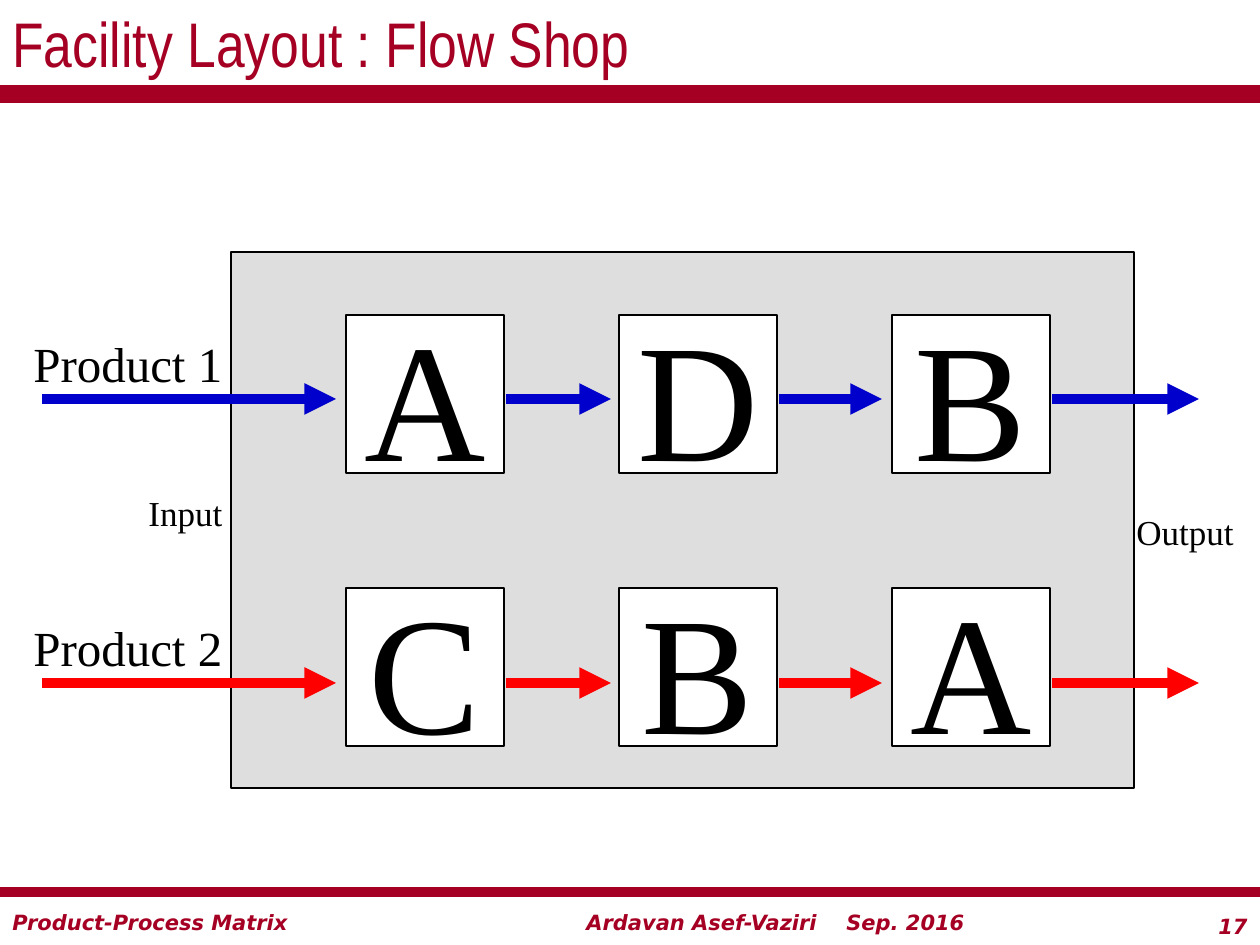
from lxml.etree import SubElement
from pptx import Presentation
from pptx.dml.color import RGBColor
from pptx.enum.shapes import MSO_CONNECTOR, MSO_SHAPE
from pptx.enum.text import MSO_ANCHOR, PP_ALIGN
from pptx.oxml.ns import qn
from pptx.util import Emu, Pt

PX = 914400 // 126
CRIMSON, BLACK, WHITE = "A50023", "000000", "FFFFFF"
SERIF, NARROW, SANS = "Times New Roman", "Arial Narrow", "DejaVu Sans"


def px(*lengths):
    return [Emu(length * PX) for length in lengths]


def color(hex_code):
    return RGBColor.from_string(hex_code)


class Sketch:
    """Draws styled elements on the current slide."""

    def __init__(self, page):
        self.page = page

    def fill_text(self, shape, text, size, font, ink, align=PP_ALIGN.LEFT,
                  bold=False, tab=None):
        para = shape.text_frame.paragraphs[0]
        para.text = text
        para.alignment = align
        if tab:
            tabs = SubElement(para._p.get_or_add_pPr(), qn("a:tabLst"))
            SubElement(tabs, qn("a:tab"), pos=str(tab * PX), algn="l")
        para.font.size = Pt(size)
        para.font.name = font
        para.font.bold = para.font.italic = bold
        para.font.color.rgb = color(ink)

    def text(self, area, text, size, font=SERIF, ink=BLACK,
             anchor=MSO_ANCHOR.TOP, **style):
        box = self.page.shapes.add_textbox(*px(*area))
        box.text_frame.word_wrap = True
        box.text_frame.vertical_anchor = anchor
        self.fill_text(box, text, size, font, ink, **style)

    def footer(self, area, text, **style):
        self.text(area, text, 12, SANS, CRIMSON, bold=True, **style)

    def rectangle(self, area, fill, opacity=100):
        box = self.page.shapes.add_shape(MSO_SHAPE.RECTANGLE, *px(*area))
        box.shadow.inherit = False
        box.fill.solid()
        box.fill.fore_color.rgb = color(fill)
        if opacity < 100:
            tint = box._element.spPr.find(qn("a:solidFill"))[0]
            SubElement(tint, qn("a:alpha"), val=str(opacity * 1000))
        box.line.color.rgb = color(BLACK)
        box.line.width = Pt(0.75)
        return box

    def station(self, area, letter):
        box = self.rectangle(area, WHITE)
        box.text_frame.word_wrap = False
        box.text_frame.vertical_anchor = MSO_ANCHOR.MIDDLE
        self.fill_text(box, letter, 96, SERIF, BLACK, PP_ALIGN.CENTER)

    def line(self, start, end, y, ink, width, arrow=False):
        line = self.page.shapes.add_connector(
            MSO_CONNECTOR.STRAIGHT, *px(start, y, end, y))
        line.line.color.rgb = color(ink)
        line.line.width = Pt(width)
        properties = line._element.spPr
        if arrow:
            SubElement(properties.find(qn("a:ln")), qn("a:tailEnd"), type="triangle")
        SubElement(properties, qn("a:effectLst"))


def main():
    deck = Presentation()
    deck.slide_width, deck.slide_height = px(1260, 945)
    sketch = Sketch(deck.slides.add_slide(deck.slide_layouts[6]))

    # Footer and rules
    sketch.footer((1166, 907, 94, 38), "17", align=PP_ALIGN.RIGHT)
    sketch.footer((574, 903, 422, 38), "Ardavan Asef-Vaziri\tSep. 2016", tab=260)
    sketch.footer((0, 903, 588, 38), "Product-Process Matrix")
    sketch.line(0, 1260, 94, CRIMSON, 10)
    sketch.line(0, 1260, 892, CRIMSON, 6)

    # Title
    sketch.text((0, 0, 1260, 84), "Facility Layout : Flow Shop", 36, NARROW,
                CRIMSON, anchor=MSO_ANCHOR.MIDDLE)

    # Facility
    sketch.rectangle((231, 252, 903, 536), "BFBFBF", opacity=50)
    sketch.text((1124, 504, 126, 54), "Output", 20)
    sketch.text((136, 485, 179, 54), "Input", 20)

    # One flow line per product: station top, arrow height, colour
    flows = [("Product 1", "ADB", 315, 399, "0000CC"),
             ("Product 2", "CBA", 588, 683, "FF0000")]
    arrows = [(42, 336), (506, 611), (779, 882), (1052, 1199)]
    for product, letters, top, arrow_y, ink in flows:
        for column, letter in enumerate(letters):
            sketch.station((346 + 273 * column, top, 158, 158), letter)
        sketch.text((21, arrow_y - 72, 325, 72), product, 28)
        for start, end in arrows:
            sketch.line(start, end, arrow_y, ink, 6, arrow=True)

    deck.save("out.pptx")


if __name__ == "__main__":
    main()
